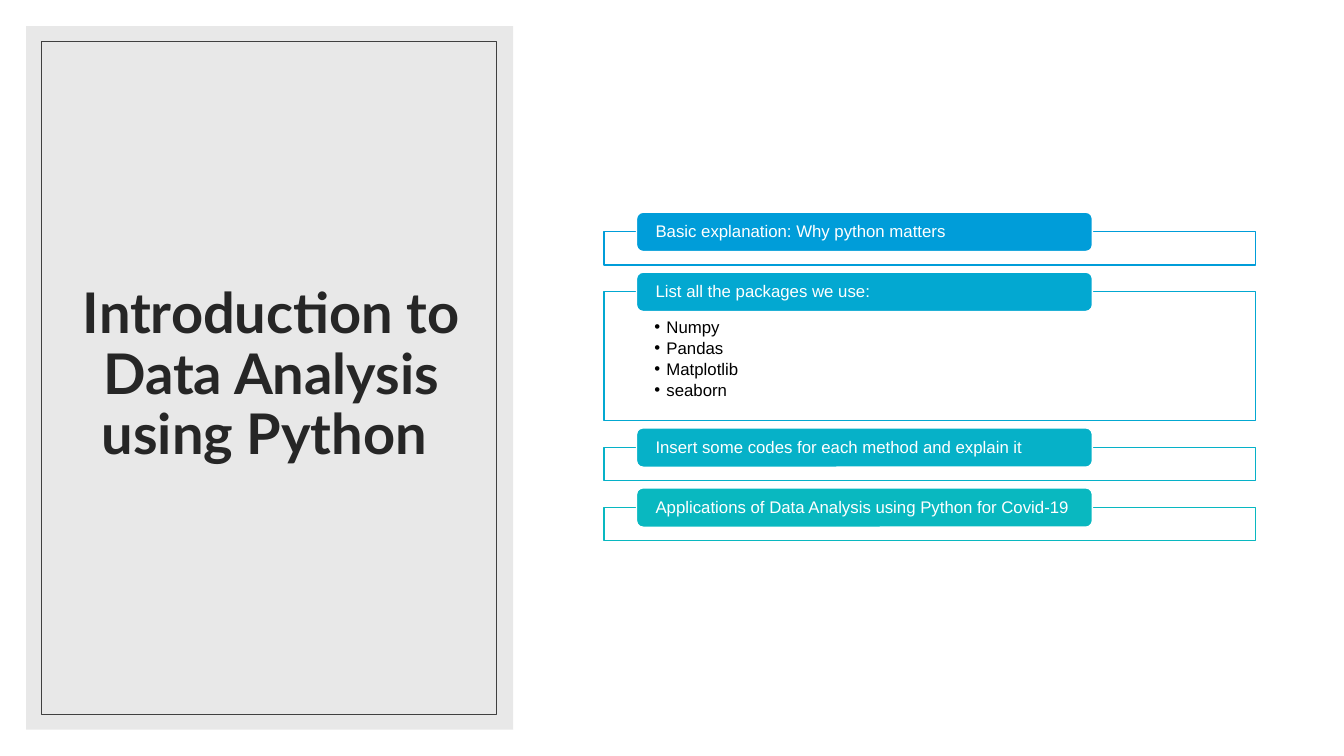
from lxml import etree
from pptx import Presentation
from pptx.dml.color import RGBColor
from pptx.enum import shapes, text
from pptx.oxml import ns
from pptx.util import Inches, Pt

WHITE = RGBColor(0xFF, 0xFF, 0xFF)
BLACK = RGBColor(0, 0, 0)
PANEL_GREY = RGBColor(0xD9, 0xD9, 0xD9)
BORDER_GREY = RGBColor(0x40, 0x40, 0x40)
TITLE_GREY = RGBColor(0x26, 0x26, 0x26)

TOPICS = [
    ("Basic explanation: Why python matters", RGBColor(0x00, 0x9D, 0xD9), []),
    ("List all the packages we use:", RGBColor(0x03, 0xA8, 0xD1),
     ["Numpy", "Pandas", "Matplotlib", "seaborn"]),
    ("Insert some codes for each method and explain it", RGBColor(0x06, 0xB1, 0xC8), []),
    ("Applications of Data Analysis using Python for Covid-19",
     RGBColor(0x09, 0xB8, 0xC0), []),
]
FRAME_HEIGHT, LIST_FRAME_HEIGHT, FRAME_GAP = 0.33, 1.28, 0.265
HEADING_HEIGHT = 0.39


def add_box(slide, kind, box, fill=None, opacity=100, line=None, line_width=1):
    shape = slide.shapes.add_shape(kind, *map(Inches, box))
    shape.shadow.inherit = False
    if fill is None:
        shape.fill.background()
    else:
        shape.fill.solid()
        shape.fill.fore_color.rgb = fill
        if opacity < 100:
            color = shape.fill._xPr.find(".//" + ns.qn("a:srgbClr"))
            etree.SubElement(color, ns.qn("a:alpha"), val=str(opacity * 1000))
    if line is None:
        shape.line.fill.background()
    else:
        shape.line.color.rgb = line
        shape.line.width = Pt(line_width)
    return shape


def write_text(shape, lines, font, anchor, insets, alignment=text.PP_ALIGN.LEFT,
               space_after=0):
    """Fill the shape with one paragraph per line and return the paragraphs."""
    frame = shape.text_frame
    frame.word_wrap = True
    frame.vertical_anchor = anchor
    for side, inset in zip(("left", "top", "right", "bottom"), insets):
        setattr(frame, f"margin_{side}", Inches(inset))
    frame.text = "\n".join(lines)
    for paragraph in frame.paragraphs:
        paragraph.alignment = alignment
        paragraph.line_spacing = 0.9
        paragraph.space_after = Pt(space_after)
        run_font = paragraph.runs[0].font
        for name, value in font.items():
            if name == "color":
                run_font.color.rgb = value
            else:
                setattr(run_font, name, value)
    return frame.paragraphs


def add_bullet(paragraph):
    properties = paragraph._p.get_or_add_pPr()
    properties.set("marL", str(Inches(0.12)))
    properties.set("indent", str(-Inches(0.12)))
    etree.SubElement(properties, ns.qn("a:buFont"), typeface="Arial")
    etree.SubElement(properties, ns.qn("a:buChar"), char="•")


def add_title_panel(slide, left, top, width, height):
    rectangle = shapes.MSO_SHAPE.RECTANGLE
    add_box(slide, rectangle, (left, top, width, height), PANEL_GREY, 60)
    title = slide.shapes.add_textbox(*map(Inches, (
        left + 0.37, top + 0.35, width - 0.71, height - 0.74)))
    write_text(title, ["Introduction to Data Analysis using Python "],
               {"name": "Lato", "size": Pt(40), "bold": True, "color": TITLE_GREY},
               text.MSO_ANCHOR.MIDDLE, (0.1, 0.05, 0.1, 0.05), text.PP_ALIGN.CENTER)
    add_box(slide, rectangle, (left + 0.15, top + 0.15, width - 0.32, height - 0.3),
            line=BORDER_GREY, line_width=0.5)


def add_topic(slide, left, top, width, height, heading, color, items):
    """Draw a framed topic whose heading straddles the top edge of the frame."""
    font = {"name": "Arial", "size": Pt(12)}
    frame = add_box(slide, shapes.MSO_SHAPE.RECTANGLE, (left, top, width, height),
                    WHITE, 90, color)
    if items:
        for paragraph in write_text(frame, items, {**font, "color": BLACK},
                                    text.MSO_ANCHOR.TOP, (0.5, 0.27, 0.5, 0.09),
                                    space_after=2):
            add_bullet(paragraph)
    label = add_box(slide, shapes.MSO_SHAPE.ROUNDED_RECTANGLE,
                    (left + width * 0.05, top - HEADING_HEIGHT / 2,
                     width * 0.7, HEADING_HEIGHT), color, line=WHITE)
    write_text(label, [heading], {**font, "color": WHITE},
               text.MSO_ANCHOR.MIDDLE, (0.17, 0, 0.05, 0))


def add_topic_list(slide, left, top, width):
    for heading, color, items in TOPICS:
        height = LIST_FRAME_HEIGHT if items else FRAME_HEIGHT
        add_topic(slide, left, top, width, height, heading, color, items)
        top += height + FRAME_GAP


def main():
    presentation = Presentation()
    presentation.slide_width = Inches(13.33)
    presentation.slide_height = Inches(7.5)
    slide = presentation.slides.add_slide(presentation.slide_layouts[6])
    add_title_panel(slide, 0.26, 0.26, 4.83, 6.98)
    add_topic_list(slide, 5.99, 2.3, 6.46)
    presentation.save("out.pptx")


if __name__ == "__main__":
    main()
